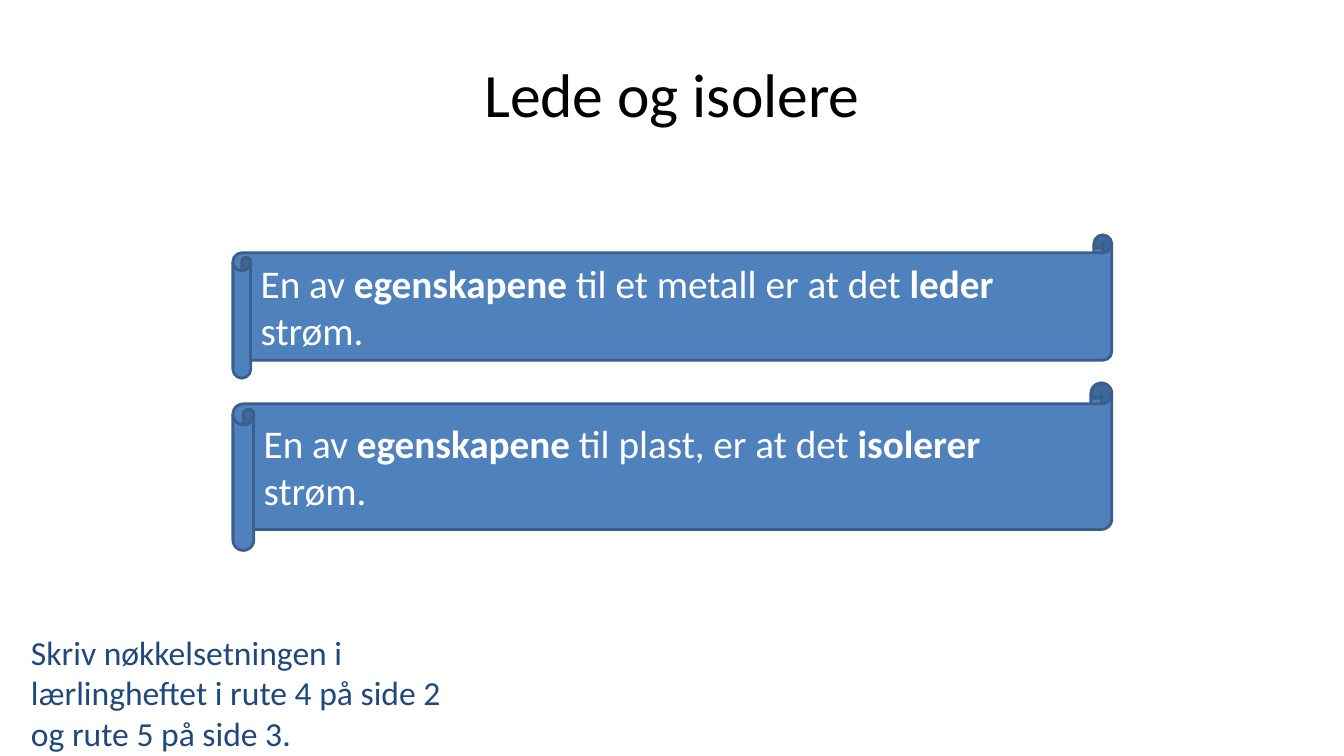
from pptx import Presentation
from pptx import util as u
from pptx.dml import color
from pptx.enum import shapes, text

FONT = "Calibri"


def rgb(code):
    return color.RGBColor.from_string(code)


def style(font, size, code):
    font.name = FONT
    font.size = u.Pt(size)
    font.color.rgb = rgb(code)


def place(shape, left, top, width, height):
    shape.left, shape.top = u.Cm(left), u.Cm(top)
    shape.width, shape.height = u.Cm(width), u.Cm(height)


def title(slide, words):
    shape = slide.shapes.title
    place(shape, 1.7, 0.76, 30.48, 3.18)
    frame = shape.text_frame
    frame.text = words
    frame.vertical_anchor = text.MSO_ANCHOR.MIDDLE
    para = frame.paragraphs[0]
    para.alignment = text.PP_ALIGN.CENTER
    style(para.runs[0].font, 44, "000000")


def scroll(slide, top, height, parts):
    """Draw a scroll whose every second text part is bold."""
    shape = slide.shapes.add_shape(
        shapes.MSO_SHAPE.HORIZONTAL_SCROLL,
        u.Cm(5.87), u.Cm(top), u.Cm(22.15), u.Cm(height))
    shape.shadow.inherit = False
    shape.fill.solid()
    shape.fill.fore_color.rgb = rgb("4F81BD")
    shape.line.color.rgb = rgb("3A5F8C")
    shape.line.width = u.Pt(2)
    frame = shape.text_frame
    frame.word_wrap = True
    frame.vertical_anchor = text.MSO_ANCHOR.MIDDLE
    para = frame.paragraphs[0]
    para.alignment = text.PP_ALIGN.LEFT
    for index, part in enumerate(parts):
        run = para.add_run()
        run.text = part
        style(run.font, 28, "FFFFFF")
        run.font.bold = index % 2 == 1


def note(slide, words):
    box = slide.shapes.add_textbox(
        u.Cm(0.53), u.Cm(15.8), u.Cm(11.61), u.Cm(3.33))
    frame = box.text_frame
    frame.word_wrap = True
    frame.auto_size = text.MSO_AUTO_SIZE.SHAPE_TO_FIT_TEXT
    frame.text = words
    style(frame.paragraphs[0].runs[0].font, 24, "1F497D")


def main():
    deck = Presentation()
    deck.slide_width, deck.slide_height = u.Cm(33.87), u.Cm(19.05)
    slide = deck.slides.add_slide(deck.slide_layouts.get_by_name("Title Only"))
    title(slide, "Lede og isolere")
    scroll(slide, 5.92, 3.61, [
        "En av ", "egenskapene", " til et metall er at det ", "leder ", "strøm."])
    scroll(slide, 9.65, 4.22, [
        "En av ", "egenskapene", " til plast, er at det ", "isolerer ", "strøm."])
    note(slide, "Skriv nøkkelsetningen i lærlingheftet i rute 4 på side 2 "
                "og rute 5 på side 3.")
    deck.save("out.pptx")


if __name__ == "__main__":
    main()
